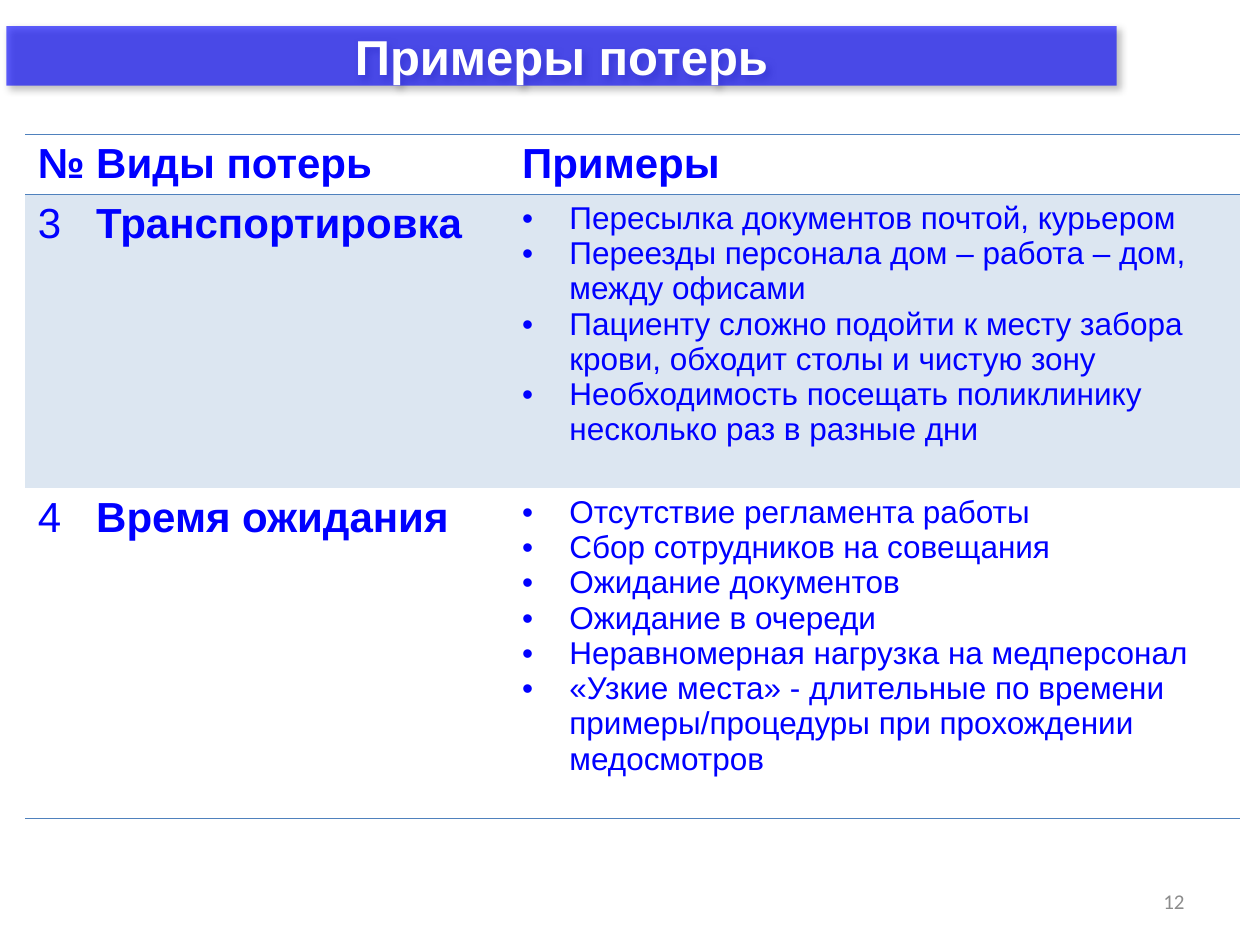
from dataclasses import dataclass

from lxml import etree
from pptx import Presentation
from pptx.dml.color import RGBColor as RGB
from pptx.enum.text import MSO_ANCHOR as Anchor, MSO_AUTO_SIZE as AutoSize, PP_ALIGN as Align
from pptx.oxml import parse_xml
from pptx.oxml.ns import nsdecls, qn
from pptx.util import Pt


@dataclass
class Theme:
    text: str = "0000FF"
    title_fill: str = "0000FF"
    title_text: str = "FFFFFF"
    rule: str = "4F81BD"
    band: str = "DCE6F1"
    number: str = "8C8C8C"
    title_size: int = 28
    head_size: int = 24
    list_size: int = 18
    number_size: int = 12


theme = Theme()


def style_text(paragraph, color, **formats):
    font = paragraph.font
    for name, value in formats.items():
        setattr(font, name, value)
    font.color.rgb = RGB.from_string(color)


def add_rule(cell, side):
    cell._tc.get_or_add_tcPr().append(parse_xml(
        f'<a:{side} {nsdecls("a")} w="12700"><a:solidFill>'
        f'<a:srgbClr val="{theme.rule}"/></a:solidFill></a:{side}>'))


presentation = Presentation()
presentation.slide_width, presentation.slide_height = Pt(720), Pt(540)
slide = presentation.slides.add_slide(presentation.slide_layouts[5])

# Title: rounded translucent bar with a soft shadow
title = slide.shapes.title
title.left, title.top, title.width, title.height = Pt(3.6), Pt(15), Pt(634.5), Pt(34)
properties = title._element.spPr
properties.append(parse_xml(
    f'<a:prstGeom {nsdecls("a")} prst="roundRect"><a:avLst/></a:prstGeom>'))
title.fill.solid()
title.fill.fore_color.rgb = RGB.from_string(theme.title_fill)
fill_color = properties.find(qn("a:solidFill"))[0]
etree.SubElement(fill_color, qn("a:alpha"), val="62000")
title.line.fill.background()
properties.append(parse_xml(
    f'<a:effectLst {nsdecls("a")}><a:outerShdw blurRad="50800" dist="38100" dir="2700000">'
    '<a:srgbClr val="000000"><a:alpha val="40000"/></a:srgbClr></a:outerShdw></a:effectLst>'))
frame = title.text_frame
frame.text = "Примеры потерь"
frame.auto_size = AutoSize.NONE
frame.vertical_anchor = Anchor.MIDDLE
frame.paragraphs[0].alignment = Align.CENTER
style_text(frame.paragraphs[0], theme.title_text, name="Arial",
           size=Pt(theme.title_size), bold=True)

# Table of losses: the third column holds bulleted lists
rows = [
    ("№", "Виды потерь", ["Примеры"]),
    ("3", "Транспортировка", [
        "Пересылка документов почтой, курьером",
        "Переезды персонала дом – работа – дом, между офисами",
        "Пациенту сложно подойти к месту забора крови, обходит столы и чистую зону",
        "Необходимость посещать поликлинику несколько раз в разные дни",
    ]),
    ("4", "Время ожидания", [
        "Отсутствие регламента работы",
        "Сбор сотрудников на совещания",
        "Ожидание документов",
        "Ожидание в очереди",
        "Неравномерная нагрузка на медперсонал",
        "«Узкие места» - длительные по времени примеры/процедуры при прохождении медосмотров",
    ]),
]
column_widths = [33.4, 243.4, 417.6]
row_heights = [34.3, 168, 188.6]
table = slide.shapes.add_table(
    len(rows), len(column_widths), Pt(14.4), Pt(76.8),
    Pt(sum(column_widths)), Pt(sum(row_heights))).table
table.horz_banding = False
# Plain table style without grid
table._tbl.tblPr.find(qn("a:tableStyleId")).text = "{2D5ABB26-0587-4C30-8999-92F81FD0307C}"
for column, width in zip(table.columns, column_widths):
    column.width = Pt(width)
for row, height in zip(table.rows, row_heights):
    row.height = Pt(height)

for row_index, (number, kind, examples) in enumerate(rows):
    is_header = row_index == 0
    for column_index, lines in enumerate([[number], [kind], examples]):
        cell = table.cell(row_index, column_index)
        if is_header:
            add_rule(cell, "lnT")
        if row_index != 1:
            add_rule(cell, "lnB")
        if row_index == 1:
            cell.fill.solid()
            cell.fill.fore_color.rgb = RGB.from_string(theme.band)
        else:
            cell.fill.background()

        is_list = column_index == 2 and not is_header
        cell.text = "\n".join(lines)
        for paragraph in cell.text_frame.paragraphs:
            if is_list:
                paragraph_properties = paragraph._p.get_or_add_pPr()
                paragraph_properties.set("marL", str(Pt(27)))
                paragraph_properties.set("indent", str(Pt(-27)))
                etree.SubElement(paragraph_properties, qn("a:buFont"), typeface="Arial")
                etree.SubElement(paragraph_properties, qn("a:buChar"), char="•")
            style_text(paragraph, theme.text, name="Arial",
                       size=Pt(theme.list_size if is_list else theme.head_size),
                       bold=is_header or column_index == 1)

# Slide number
number_box = slide.shapes.add_textbox(Pt(516), Pt(500.5), Pt(168), Pt(28.75))
frame = number_box.text_frame
frame.word_wrap = True
frame.vertical_anchor = Anchor.MIDDLE
frame.text = "12"
frame.paragraphs[0].alignment = Align.RIGHT
style_text(frame.paragraphs[0], theme.number, name="Calibri", size=Pt(theme.number_size))

presentation.save("out.pptx")
